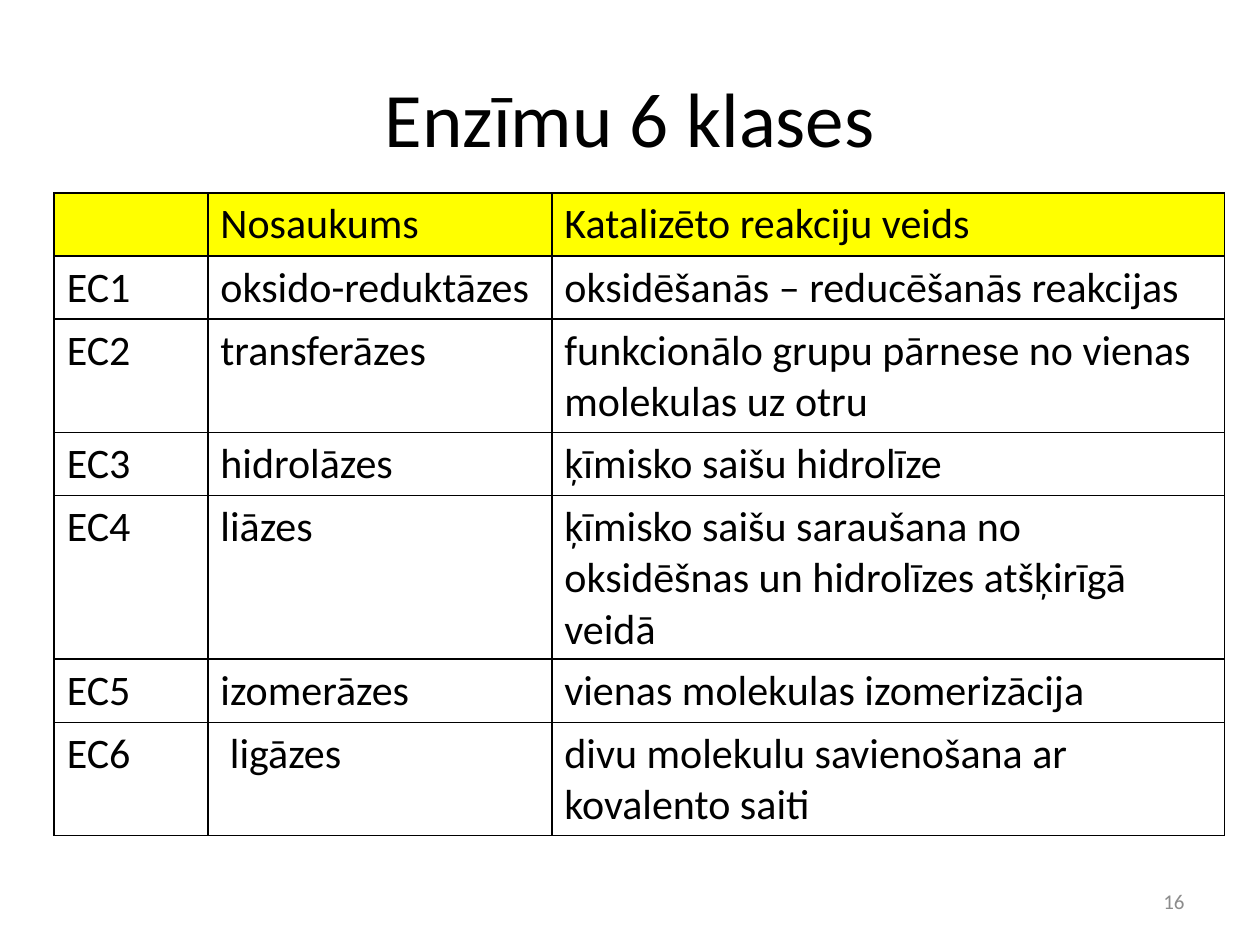
"""Build a slide with a table of the six enzyme classes."""
from lxml import etree
from pptx import Presentation
from pptx.dml.color import RGBColor
from pptx.enum import text
from pptx.oxml.ns import qn
from pptx.util import Inches, Pt

FONT = "Calibri"
BLACK = "000000"
YELLOW = "FFFF00"
GREY = "8C8C8C"
COLUMN_WIDTHS = (1.22, 2.73, 5.34)
ROW_HEIGHT = 0.41
ENZYME_CLASSES = [
    ("", "Nosaukums", "Katalizēto reakciju veids"),
    ("EC1", "oksido-reduktāzes", "oksidēšanās – reducēšanās reakcijas"),
    ("EC2", "transferāzes", "funkcionālo grupu pārnese no vienas molekulas uz otru"),
    ("EC3", "hidrolāzes", "ķīmisko saišu hidrolīze"),
    ("EC4", "liāzes", "ķīmisko saišu saraušana no oksidēšnas un hidrolīzes atšķirīgā veidā"),
    ("EC5", "izomerāzes", "vienas molekulas izomerizācija"),
    ("EC6", " ligāzes", "divu molekulu savienošana ar kovalento saiti"),
]


def color(value):
    """Return the colour for a hex string."""
    return RGBColor.from_string(value)


def write_text(paragraph, words, size, font_color=BLACK):
    """Add one formatted run to a paragraph."""
    run = paragraph.add_run()
    run.text = words
    for name, value in {"name": FONT, "size": Pt(size)}.items():
        setattr(run.font, name, value)
    run.font.color.rgb = color(font_color)


def add_text(slide, box, words, size, alignment, font_color=BLACK):
    """Add a vertically centred text box."""
    frame = slide.shapes.add_textbox(*map(Inches, box)).text_frame
    settings = {"word_wrap": True, "vertical_anchor": text.MSO_ANCHOR.MIDDLE}
    for name, value in settings.items():
        setattr(frame, name, value)
    paragraph = frame.paragraphs[0]
    paragraph.alignment = alignment
    write_text(paragraph, words, size, font_color)


def set_borders(cell, line_color, width):
    """Draw a solid line on all four sides of a cell."""
    properties = cell._tc.get_or_add_tcPr()
    for index, side in enumerate(("a:lnL", "a:lnR", "a:lnT", "a:lnB")):
        line = etree.Element(qn(side), w=str(Pt(width)))
        fill = etree.SubElement(line, qn("a:solidFill"))
        etree.SubElement(fill, qn("a:srgbClr"), val=line_color)
        properties.insert(index, line)


def format_cell(cell, words, is_header):
    """Set the text, fill and borders of a cell."""
    if words:
        write_text(cell.text_frame.paragraphs[0], words, 24)
    if is_header:
        cell.fill.solid()
        cell.fill.fore_color.rgb = color(YELLOW)
    else:
        cell.fill.background()
    set_borders(cell, BLACK, 1)


def add_class_table(slide, left, top):
    """Add the table of enzyme classes."""
    row_count = len(ENZYME_CLASSES)
    size = (sum(COLUMN_WIDTHS), ROW_HEIGHT * row_count)
    table = slide.shapes.add_table(
        row_count, len(COLUMN_WIDTHS), *map(Inches, (left, top, *size))
    ).table
    table.horz_banding = False
    for column, width in zip(table.columns, COLUMN_WIDTHS):
        column.width = Inches(width)
    for row_index, (row, entries) in enumerate(zip(table.rows, ENZYME_CLASSES)):
        row.height = Inches(ROW_HEIGHT)
        for cell, words in zip(row.cells, entries):
            format_cell(cell, words, row_index == 0)


def main():
    """Create and save the presentation."""
    presentation = Presentation()
    presentation.slide_width = Inches(10)
    presentation.slide_height = Inches(7.5)
    slide = presentation.slides.add_slide(presentation.slide_layouts[6])
    add_text(slide, (0.5, 0.3, 9, 1.25), "Enzīmu 6 klases", 44, text.PP_ALIGN.CENTER)
    add_class_table(slide, 0.43, 1.53)
    add_text(slide, (7.17, 6.95, 2.33, 0.4), "16", 12, text.PP_ALIGN.RIGHT, GREY)
    presentation.save("out.pptx")


if __name__ == "__main__":
    main()
